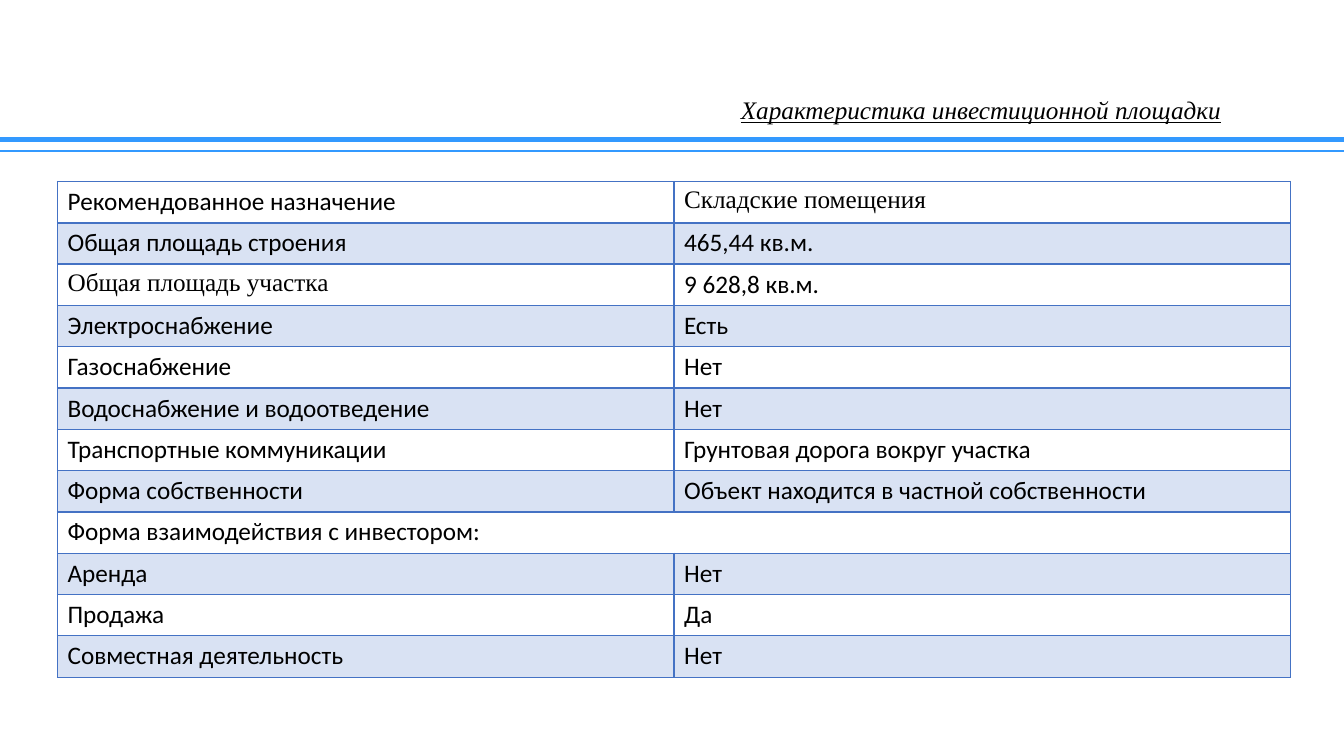
from lxml import etree
from pptx import Presentation
from pptx import util as u
from pptx.dml import color
from pptx.enum import shapes, text
from pptx.oxml import ns

BLUE = "4472C4"
SKY = "3399FF"
BLACK = "000000"
SANS = "Calibri"
SERIF = "Times New Roman"
TEXT_SIZE = 18

ROWS = [
    ("Рекомендованное назначение", "Складские помещения"),
    ("Общая площадь строения", "465,44 кв.м."),
    ("Общая площадь участка", "9 628,8 кв.м."),
    ("Электроснабжение", "Есть"),
    ("Газоснабжение", "Нет"),
    ("Водоснабжение и водоотведение", "Нет"),
    ("Транспортные коммуникации", "Грунтовая дорога вокруг участка"),
    ("Форма собственности", "Объект находится в частной собственности"),
    ("Форма взаимодействия с инвестором:",),
    ("Аренда", "Нет"),
    ("Продажа", "Да"),
    ("Совместная деятельность", "Нет"),
]
SERIF_CELLS = {"Складские помещения", "Общая площадь участка"}


def rgb(value):
    return color.RGBColor.from_string(value)


def add_element(parent, tag, **attributes):
    return etree.SubElement(parent, ns.qn(tag), **attributes)


class SitePage:
    def __init__(self, deck):
        self.width = deck.slide_width
        self.height = deck.slide_height
        self.page = deck.slides.add_slide(deck.slide_layouts[5])

    def across(self, percent):
        return u.Emu(round(self.width * percent / 100))

    def down(self, percent):
        return u.Emu(round(self.height * percent / 100))

    def add_words(self, para, words, font=SANS, emphasis=None):
        span = para.add_run()
        span.text = words
        span.font.name = font
        span.font.size = u.Pt(TEXT_SIZE)
        span.font.bold = False
        span.font.italic = emphasis
        span.font.underline = emphasis
        span.font.color.rgb = rgb(BLACK)

    def rule(self, top, weight):
        line = self.page.shapes.add_connector(
            shapes.MSO_CONNECTOR.STRAIGHT, 0, self.down(top), self.width, self.down(top))
        line.line.color.rgb = rgb(SKY)
        line.line.width = u.Pt(weight)
        add_element(line._element.spPr, "a:effectLst")

    def title(self, left, top, width, height, words):
        box = self.page.shapes.title
        box.left, box.top = self.across(left), self.down(top)
        box.width, box.height = self.across(width), self.down(height)
        frame = box.text_frame
        frame.auto_size = text.MSO_AUTO_SIZE.NONE
        frame.word_wrap = True
        frame.vertical_anchor = text.MSO_ANCHOR.MIDDLE
        para = frame.paragraphs[0]
        para.alignment = text.PP_ALIGN.CENTER
        para.line_spacing = 0.9
        self.add_words(para, words, SERIF, True)

    def borders(self, cell, bottom):
        properties = cell._tc.get_or_add_tcPr()
        for side, weight in zip("LRTB", (1, 1, 1, bottom)):
            line = add_element(properties, f"a:ln{side}", w=str(u.Pt(weight)))
            fill = add_element(line, "a:solidFill")
            add_element(fill, "a:srgbClr", val=BLUE)

    def shade(self, cell, banded):
        if not banded:
            cell.fill.background()
            return
        cell.fill.solid()
        cell.fill.fore_color.rgb = rgb(BLUE)
        tint = cell._tc.tcPr.find(ns.qn("a:solidFill"))
        add_element(tint[0], "a:alpha", val="20000")

    def table(self, left, top, width, height, rows):
        table = self.page.shapes.add_table(
            len(rows), 2, self.across(left), self.down(top),
            self.across(width), self.down(height)).table
        table.first_row = False
        table.horz_banding = False
        for number, entries in enumerate(rows):
            for column in range(2):
                cell = table.cell(number, column)
                self.borders(cell, 2 if number == 0 else 1)
                self.shade(cell, number % 2 == 1)
            if len(entries) == 1:
                table.cell(number, 0).merge(table.cell(number, 1))
            for column, words in enumerate(entries):
                para = table.cell(number, column).text_frame.paragraphs[0]
                self.add_words(para, words, SERIF if words in SERIF_CELLS else SANS)


def main():
    deck = Presentation()
    deck.slide_width = u.Inches(13.33)
    deck.slide_height = u.Inches(7.5)
    site = SitePage(deck)
    site.rule(18.4, 3.5)
    site.rule(20, 1.5)
    site.title(50, 12.93, 46, 3.6, "Характеристика инвестиционной площадки")
    site.table(4.28, 24, 91.75, 65.6, ROWS)
    deck.save("out.pptx")


if __name__ == "__main__":
    main()
